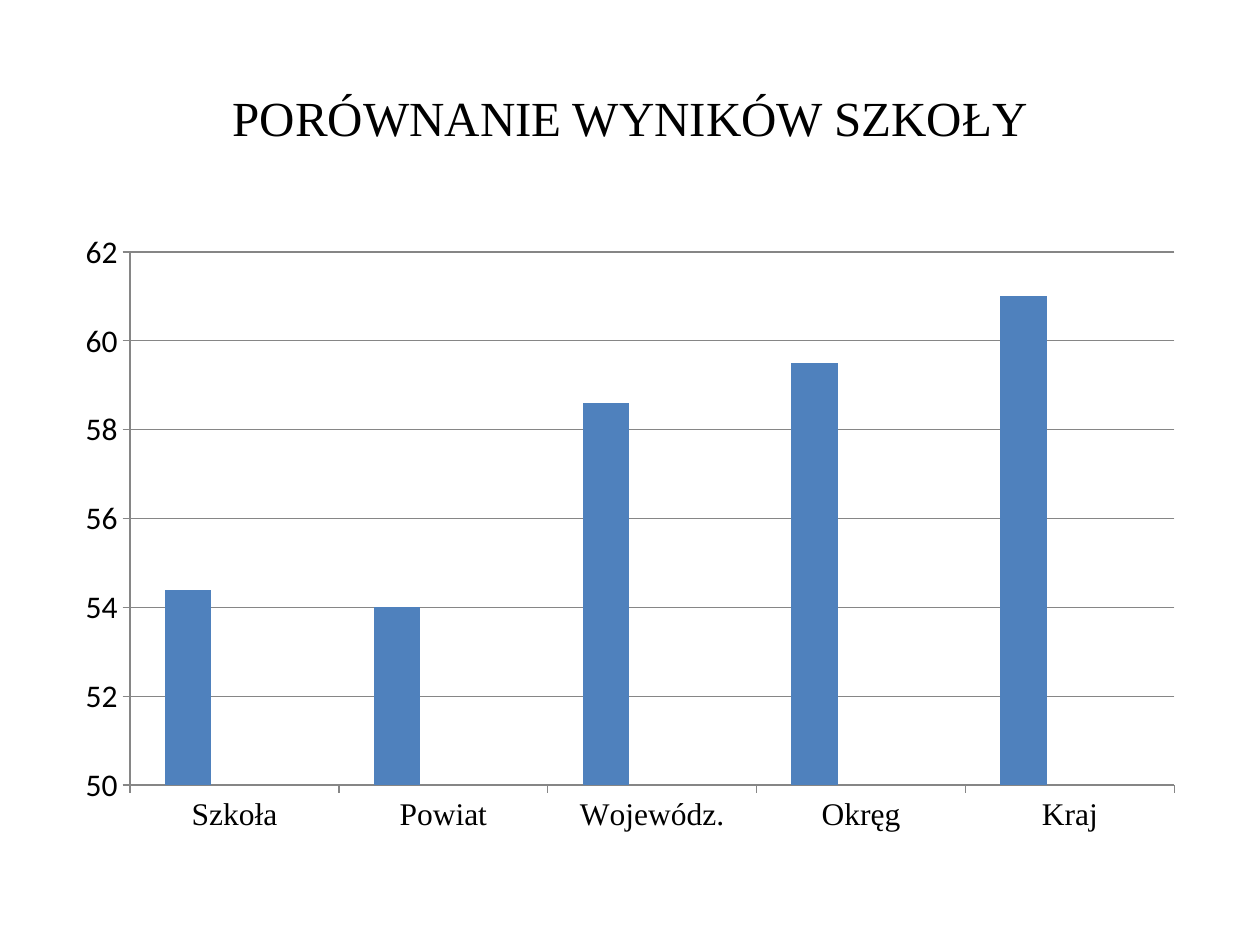
from pptx import Presentation
from pptx.chart.data import CategoryChartData
from pptx.dml.color import RGBColor
from pptx.enum.chart import XL_CHART_TYPE, XL_TICK_MARK
from pptx.enum.text import MSO_ANCHOR, PP_ALIGN
from pptx.util import Pt

COLORS = {"text": "000000", "line": "868686"}
SERIES = [
    ("Series 1", [54.4, 54, 58.6, 59.5, 61], "4F81BD"),
    ("Series 2", [None] * 5, "C0504D"),
    ("Series 3", [None] * 5, "9BBB59"),
]
PLACES = ["Szkoła", "Powiat", "Wojewódz.", "Okręg", "Kraj"]


def color(name):
    return RGBColor.from_string(COLORS[name])


def set_font(font, name, size):
    font.name = name
    font.size = Pt(size)
    font.color.rgb = color("text")


def set_line(line):
    line.color.rgb = color("line")
    line.width = Pt(0.75)


def add_title(slide, text):
    box = slide.shapes.add_textbox(Pt(36), Pt(21.6), Pt(648), Pt(90))
    frame = box.text_frame
    frame.word_wrap = True
    frame.vertical_anchor = MSO_ANCHOR.MIDDLE
    par = frame.paragraphs[0]
    par.text = text
    par.alignment = PP_ALIGN.CENTER
    set_font(par.font, "Times New Roman", 28)


def style_axis(axis, font):
    axis.major_tick_mark = XL_TICK_MARK.OUTSIDE
    axis.minor_tick_mark = XL_TICK_MARK.NONE
    set_line(axis.format.line)
    set_font(axis.tick_labels.font, font, 18)


def add_bars(slide):
    data = CategoryChartData()
    data.categories = PLACES
    for name, values, _ in SERIES:
        data.add_series(name, values)
    chart = slide.shapes.add_chart(
        XL_CHART_TYPE.COLUMN_CLUSTERED,
        Pt(36), Pt(126), Pt(648), Pt(356.4), data,
    ).chart
    set_font(chart.font, "Calibri", 18)
    chart.has_legend = False
    chart.has_title = False
    plot = chart.plots[0]
    plot.gap_width = 150
    plot.overlap = 0
    plot.vary_by_categories = False
    for bars, (_, _, fill) in zip(plot.series, SERIES):
        bars.format.fill.solid()
        bars.format.fill.fore_color.rgb = RGBColor.from_string(fill)
    style_axis(chart.category_axis, "Times New Roman")
    scale = chart.value_axis
    style_axis(scale, "Calibri")
    scale.minimum_scale = 50
    scale.maximum_scale = 62
    scale.major_unit = 2
    scale.has_major_gridlines = True
    set_line(scale.major_gridlines.format.line)


def main():
    deck = Presentation()
    deck.slide_width = Pt(720)
    deck.slide_height = Pt(540)
    slide = deck.slides.add_slide(deck.slide_layouts[6])
    add_title(slide, "PORÓWNANIE WYNIKÓW SZKOŁY")
    add_bars(slide)
    deck.save("out.pptx")


if __name__ == "__main__":
    main()
